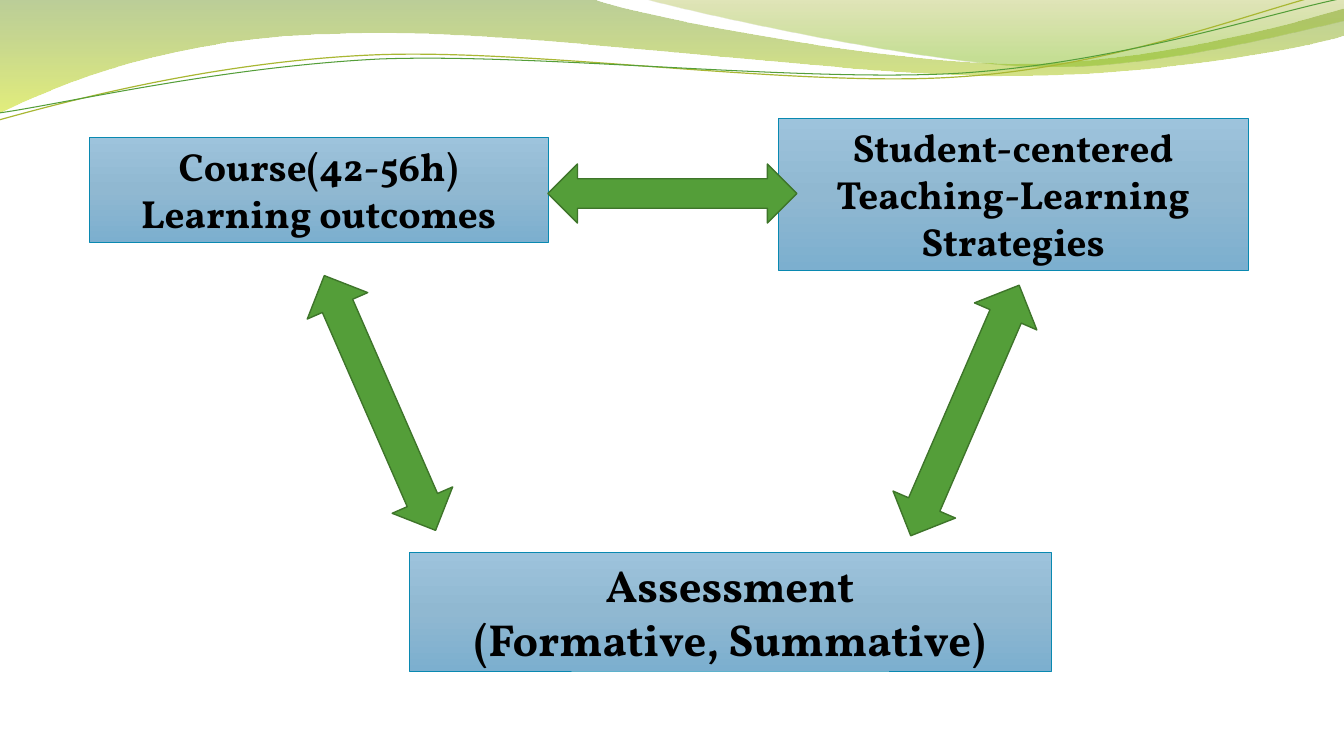
"""Build a slide linking learning outcomes, teaching strategies and assessment."""
from dataclasses import dataclass

from pptx import Presentation
from pptx.dml.color import RGBColor
from pptx.enum.shapes import MSO_SHAPE
from pptx.enum.text import MSO_ANCHOR, PP_ALIGN
from pptx.oxml.ns import qn
from pptx.oxml.xmlchemy import OxmlElement
from pptx.util import Pt

RECTANGLE = MSO_SHAPE.RECTANGLE
ACROSS = MSO_SHAPE.LEFT_RIGHT_ARROW
UPRIGHT = MSO_SHAPE.UP_DOWN_ARROW
CENTER = PP_ALIGN.CENTER
MIDDLE = MSO_ANCHOR.MIDDLE

EMU_PER_PX = 12192000 / 1344
FONT = "Vollkorn"
BLACK = "000000"
GREEN = "549E39"
DARK_GREEN = "3E752A"
BLUE = "0989B1"


@dataclass(frozen=True)
class Stop:
    """A gradient stop with its position and opacity in percent."""
    position: int
    color: str
    opacity: int = 100


@dataclass(frozen=True)
class Curve:
    """A cubic curve given by two control points and an end point."""
    points: tuple[tuple[int, int], ...]


@dataclass(frozen=True)
class Edge:
    """A straight edge to a point."""
    points: tuple[tuple[int, int], ...]


@dataclass(frozen=True)
class Wave:
    """A decorative outline, either filled by stops or drawn as a line."""
    start: tuple[int, int]
    segments: tuple[Curve | Edge, ...]
    stops: tuple[Stop, ...] = ()
    line: str = ""
    width: float = 0


@dataclass(frozen=True)
class Box:
    """A labelled rectangle."""
    text: str
    left: int
    top: int
    width: int
    height: int
    size: int


@dataclass(frozen=True)
class Arrow:
    """A double-headed block arrow."""
    preset: MSO_SHAPE
    left: int
    top: int
    width: int
    height: int
    rotation: float = 0


BOX_STOPS = (Stop(0, "9DC3DC"), Stop(50, "90B8D1"), Stop(100, "7CAFCF"))

WAVES = (
    Wave((0, 0), (
        Edge(((592, -1),)),
        Curve(((639, 17), (891, 64), (1019, 64))),
        Curve(((1146, 64), (1287, 26), (1344, 9))),
        Edge(((1345, 36),)),
        Curve(((1322, 44), (1168, 77), (1002, 76))),
        Curve(((836, 76), (513, 28), (346, 34))),
        Curve(((173, 36), (61, 84), (-2, 114))),
    ), stops=(Stop(0, "69921C", 45), Stop(100, "CCE10F", 55))),
    Wave((643, -1), (
        Curve(((685, 11), (916, 62), (1033, 66))),
        Curve(((1149, 70), (1292, 32), (1344, 21))),
        Edge(((1344, 0),)),
    ), stops=(Stop(0, "9BAA1A", 30), Stop(80, "81BA16", 45))),
    Wave((-1, 120), (
        Curve(((64, 102), (212, 62), (372, 55))),
        Curve(((531, 48), (795, 88), (957, 77))),
        Curve(((1119, 67), (1261, 8), (1341, -10))),
    ), line="A9B733", width=0.85),
    Wave((-1, 113), (
        Curve(((63, 104), (220, 67), (380, 59))),
        Curve(((541, 53), (802, 83), (963, 73))),
        Curve(((1123, 62), (1265, 14), (1344, -2))),
    ), line=GREEN, width=0.75),
)

BOXES = (
    Box("Course(42-56h)\nLearning outcomes", 89, 137, 459, 105, 28),
    Box("Student-centered Teaching-Learning Strategies", 778, 118, 470, 152, 28),
    Box("Assessment\n(Formative, Summative)", 409, 552, 642, 119, 32),
)

ARROWS = (
    Arrow(ACROSS, 548, 164, 249, 59),
    Arrow(UPRIGHT, 347, 264, 66, 278, 336.4),
    Arrow(UPRIGHT, 931, 274, 68, 273, 23.4),
)


def px(value: int) -> int:
    """Turn pixels into EMU."""
    return round(value * EMU_PER_PX)


def rgb(color: str) -> RGBColor:
    """Turn a hex string into a colour."""
    return RGBColor.from_string(color)


def set_line(shape, color: str, width: float) -> None:
    """Give a shape a solid outline."""
    shape.line.color.rgb = rgb(color)
    shape.line.width = Pt(width)


def set_gradient(shape, stops: tuple[Stop, ...]) -> None:
    """Fill a shape from top to bottom with the stops."""
    shape.fill.gradient()
    shape.fill.gradient_angle = 270
    stop_list = shape._element.spPr.find(qn("a:gradFill")).find(qn("a:gsLst"))
    for old in list(stop_list):
        stop_list.remove(old)
    for stop in stops:
        entry = OxmlElement("a:gs")
        entry.set("pos", str(stop.position * 1000))
        color = OxmlElement("a:srgbClr")
        color.set("val", stop.color)
        if stop.opacity < 100:
            alpha = OxmlElement("a:alpha")
            alpha.set("val", str(stop.opacity * 1000))
            color.append(alpha)
        entry.append(color)
        stop_list.append(entry)


def draw_wave(shapes, wave: Wave) -> None:
    """Draw a wave, merging each curve's three points into one cubic segment."""
    builder = shapes.build_freeform(*wave.start, scale=EMU_PER_PX)
    for segment in wave.segments:
        builder.add_line_segments(segment.points, close=False)
    if wave.stops:
        builder.add_line_segments((), close=True)
    shape = builder.convert_to_shape()
    shape.shadow.inherit = False
    steps = iter(shape._element.xpath(".//a:lnTo"))
    for segment in wave.segments:
        first, *others = [next(steps) for _ in segment.points]
        if isinstance(segment, Curve):
            cubic = OxmlElement("a:cubicBezTo")
            first.addprevious(cubic)
            for step in (first, *others):
                cubic.append(step[0])
                step.getparent().remove(step)
    if wave.stops:
        set_gradient(shape, wave.stops)
        shape.line.fill.background()
    else:
        shape.fill.background()
        set_line(shape, wave.line, wave.width)


def add_preset(shapes, preset: MSO_SHAPE, item: Box | Arrow):
    """Add a preset shape without a shadow at the item's place."""
    lengths = (item.left, item.top, item.width, item.height)
    shape = shapes.add_shape(preset, *map(px, lengths))
    shape.shadow.inherit = False
    return shape


def draw_box(shapes, box: Box) -> None:
    """Draw a labelled rectangle."""
    shape = add_preset(shapes, RECTANGLE, box)
    set_gradient(shape, BOX_STOPS)
    set_line(shape, BLUE, 0.5)
    frame = shape.text_frame
    frame.word_wrap = True
    frame.vertical_anchor = MIDDLE
    frame.text = box.text
    for para in frame.paragraphs:
        para.alignment = CENTER
        for span in para.runs:
            span.font.name = FONT
            span.font.size = Pt(box.size)
            span.font.bold = True
            span.font.color.rgb = rgb(BLACK)


def draw_arrow(shapes, arrow: Arrow) -> None:
    """Draw a double-headed arrow."""
    shape = add_preset(shapes, arrow.preset, arrow)
    shape.rotation = arrow.rotation
    shape.fill.solid()
    shape.fill.fore_color.rgb = rgb(GREEN)
    set_line(shape, DARK_GREEN, 1)


def main() -> None:
    """Build and save the deck."""
    deck = Presentation()
    deck.slide_width, deck.slide_height = px(1344), px(756)
    page = deck.slides.add_slide(deck.slide_layouts[6])
    for wave in WAVES:
        draw_wave(page.shapes, wave)
    for box in BOXES:
        draw_box(page.shapes, box)
    for arrow in ARROWS:
        draw_arrow(page.shapes, arrow)
    deck.save("out.pptx")


if __name__ == "__main__":
    main()
